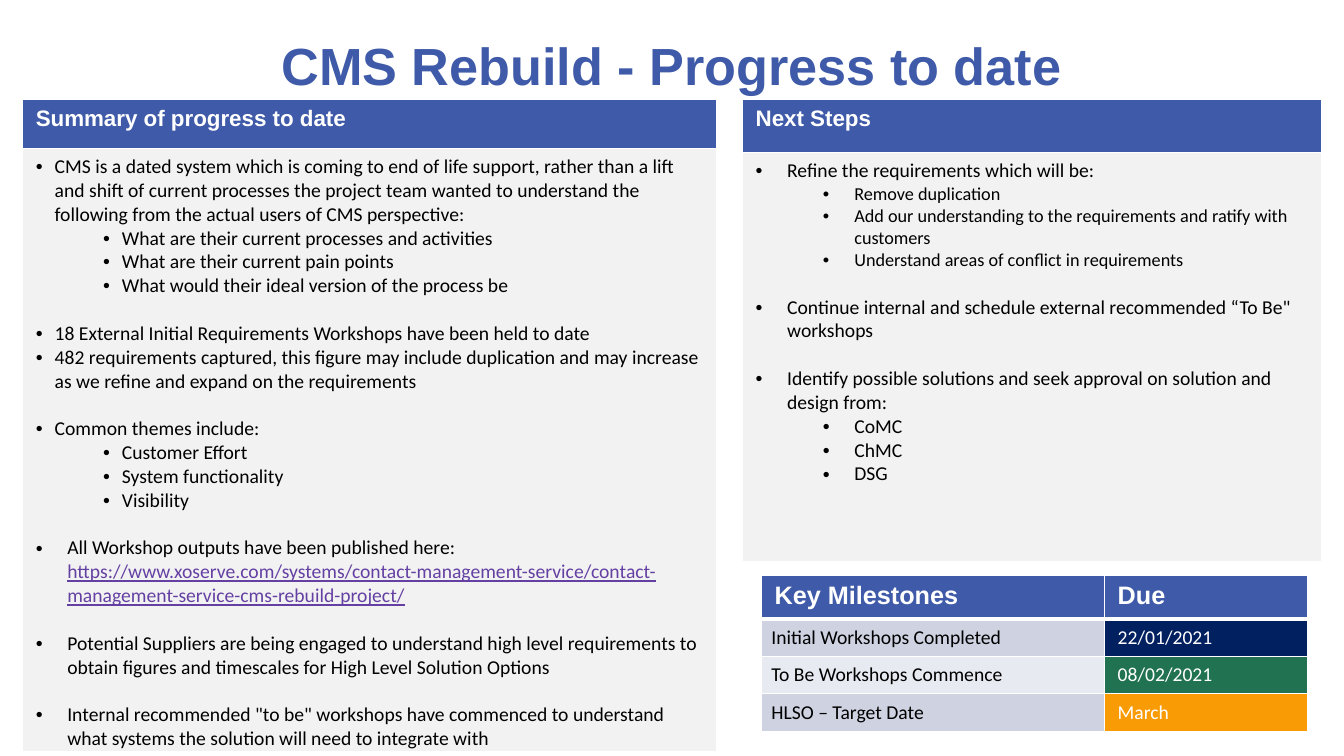
from dataclasses import dataclass

from lxml import etree
from pptx import Presentation
from pptx.dml.color import RGBColor
from pptx.enum.text import MSO_ANCHOR, PP_ALIGN
from pptx.oxml.ns import qn
from pptx.util import Pt

MIDDLE = MSO_ANCHOR.MIDDLE
CENTER = PP_ALIGN.CENTER


@dataclass(frozen=True)
class Theme:
    head: str = "Arial"
    body: str = "Calibri"
    blue: str = "3E5AA8"
    white: str = "FFFFFF"
    black: str = "000000"
    panel: str = "F2F2F2"
    link: str = "6440A3"
    navy: str = "002060"
    green: str = "207251"
    amber: str = "F89B04"
    bands: tuple = ("CED2E1", "E8EAF1")
    title: float = 37.3
    key: float = 18
    label: float = 16
    text: float = 14
    small: float = 13
    gap: float = 17
    step: float = 48


@dataclass(frozen=True)
class Item:
    text: str
    hang: float = 22.5
    level: int = 0
    gap: bool = False
    small: bool = False
    link: str = ""


class Board:
    def __init__(self, slide, theme):
        self.slide = slide
        self.theme = theme

    def font(self, target, name, size, color, bold=False):
        font = target.font
        font.name, font.size, font.bold = name, Pt(size), bold
        font.color.rgb = RGBColor.from_string(color)

    def title(self, text, left, top, width, height):
        frame = self.slide.shapes.add_textbox(
            Pt(left), Pt(top), Pt(width), Pt(height)).text_frame
        frame.word_wrap = True
        frame.vertical_anchor = MIDDLE
        para = frame.paragraphs[0]
        para.text = text
        para.alignment = CENTER
        self.font(para, self.theme.head, self.theme.title, self.theme.blue, True)

    def table(self, left, top, cols, rows):
        table = self.slide.shapes.add_table(
            len(rows), len(cols), Pt(left), Pt(top),
            Pt(sum(cols)), Pt(sum(rows))).table
        table.first_row = table.horz_banding = False
        for col, width in zip(table.columns, cols):
            col.width = Pt(width)
        for row, height in zip(table.rows, rows):
            row.height = Pt(height)
        return table

    def cell(self, cell, fill, top=1, base=1, pad=(9.6, 4.8)):
        # Borders come before the fill in the cell properties
        props = cell._tc.get_or_add_tcPr()
        for side, width in zip("LRTB", (1, 1, top, base)):
            line = etree.SubElement(props, qn("a:ln" + side), w=str(Pt(width)))
            solid = etree.SubElement(line, qn("a:solidFill"))
            etree.SubElement(solid, qn("a:srgbClr"), val=self.theme.white)
        cell.fill.solid()
        cell.fill.fore_color.rgb = RGBColor.from_string(fill)
        cell.margin_left = cell.margin_right = Pt(pad[0])
        cell.margin_top = cell.margin_bottom = Pt(pad[1])

    def label(self, cell, text, name, size, color, bold=False):
        para = cell.text_frame.paragraphs[0]
        para.text = text
        self.font(para, name, size, color, bold)

    def bullets(self, cell, items):
        theme = self.theme
        frame = cell.text_frame
        for i, item in enumerate(items):
            para = frame.add_paragraph() if i else frame.paragraphs[0]
            para.level = item.level
            if item.gap:
                para.space_before = Pt(theme.gap)
            props = para._p.get_or_add_pPr()
            props.set("marL", str(Pt(theme.step * item.level + item.hang)))
            props.set("indent", str(-Pt(item.hang)))
            etree.SubElement(props, qn("a:buFont"), typeface=theme.head)
            etree.SubElement(props, qn("a:buChar"), char="•")
            para.add_run().text = item.text
            size = theme.small if item.small else theme.text
            self.font(para, theme.body, size, theme.black)
            if item.link:
                run = para.add_run()
                run.text = item.link
                run.font.underline = True
                run.font.color.rgb = RGBColor.from_string(theme.link)

    def panel(self, left, top, width, rows, head, items):
        theme = self.theme
        table = self.table(left, top, [width], rows)
        first, second = table.cell(0, 0), table.cell(1, 0)
        self.cell(first, theme.blue)
        self.label(first, head, theme.head, theme.label, theme.white, True)
        self.cell(second, theme.panel)
        self.bullets(second, items)

    def dates(self, left, top, cols, rows, heads, marks):
        theme = self.theme
        table = self.table(left, top, cols, rows)
        for col, head in enumerate(heads):
            cell = table.cell(0, col)
            self.cell(cell, theme.blue, base=3)
            self.label(cell, head, theme.head, theme.key, theme.white, True)
        for row, (name, due, fill) in enumerate(marks, 1):
            left_cell, due_cell = table.cell(row, 0), table.cell(row, 1)
            rule = 3 if row == 1 else 1
            self.cell(left_cell, theme.bands[(row - 1) % 2], rule, pad=(7.2, 3.6))
            left_cell.vertical_anchor = MIDDLE
            self.label(left_cell, name, theme.body, theme.text, theme.black)
            self.cell(due_cell, fill, rule)
            self.label(due_cell, due, theme.body, theme.text, theme.white)


TIGHT = 13.5

PROGRESS = [
    Item("CMS is a dated system which is coming to end of life support, rather "
         "than a lift and shift of current processes the project team wanted to "
         "understand the following from the actual users of CMS perspective:", TIGHT),
    Item("What are their current processes and activities", TIGHT, 1),
    Item("What are their current pain points", TIGHT, 1),
    Item("What would their ideal version of the process be", TIGHT, 1),
    Item("18 External Initial Requirements Workshops have been held to date",
         TIGHT, gap=True),
    Item("482 requirements captured, this figure may include duplication and may "
         "increase as we refine and expand on the requirements", TIGHT),
    Item("Common themes include:", TIGHT, gap=True),
    Item("Customer Effort", TIGHT, 1),
    Item("System functionality", TIGHT, 1),
    Item("Visibility", TIGHT, 1),
    Item("All Workshop outputs have been published here: ", gap=True,
         link="https://www.xoserve.com/systems/contact-management-service/"
              "contact-management-service-cms-rebuild-project/"),
    Item("Potential Suppliers are being engaged to understand high level "
         "requirements to obtain figures and timescales for High Level Solution "
         "Options", gap=True),
    Item('Internal recommended "to be" workshops have commenced to understand '
         "what systems the solution will need to integrate with", gap=True),
]

STEPS = [
    Item("Refine the requirements which will be:"),
    Item("Remove duplication", level=1, small=True),
    Item("Add our understanding to the requirements and ratify with customers",
         level=1, small=True),
    Item("Understand areas of conflict in requirements", level=1, small=True),
    Item('Continue internal and schedule external recommended “To Be" workshops',
         gap=True),
    Item("Identify possible solutions and seek approval on solution and design "
         "from:", gap=True),
    Item("CoMC", level=1),
    Item("ChMC", level=1),
    Item("DSG", level=1),
]


def main():
    deck = Presentation()
    deck.slide_width, deck.slide_height = Pt(960), Pt(540)
    theme = Theme()
    board = Board(deck.slides.add_slide(deck.slide_layouts[6]), theme)

    # Heading
    board.title("CMS Rebuild - Progress to date", 48, 13, 864, 67)

    # Progress on the left, next steps on the right
    board.panel(16, 70.8, 496, [35, 415.5], "Summary of progress to date", PROGRESS)
    board.panel(530.2, 70.8, 413.6, [38, 292], "Next Steps", STEPS)

    # Milestone dates
    board.dates(543.8, 411, [245, 145], [30.3] + [26.7] * 3,
                ["Key Milestones", "Due"],
                [("Initial Workshops Completed", "22/01/2021", theme.navy),
                 ("To Be Workshops Commence", "08/02/2021", theme.green),
                 ("HLSO – Target Date", "March", theme.amber)])

    deck.save("out.pptx")


if __name__ == "__main__":
    main()
